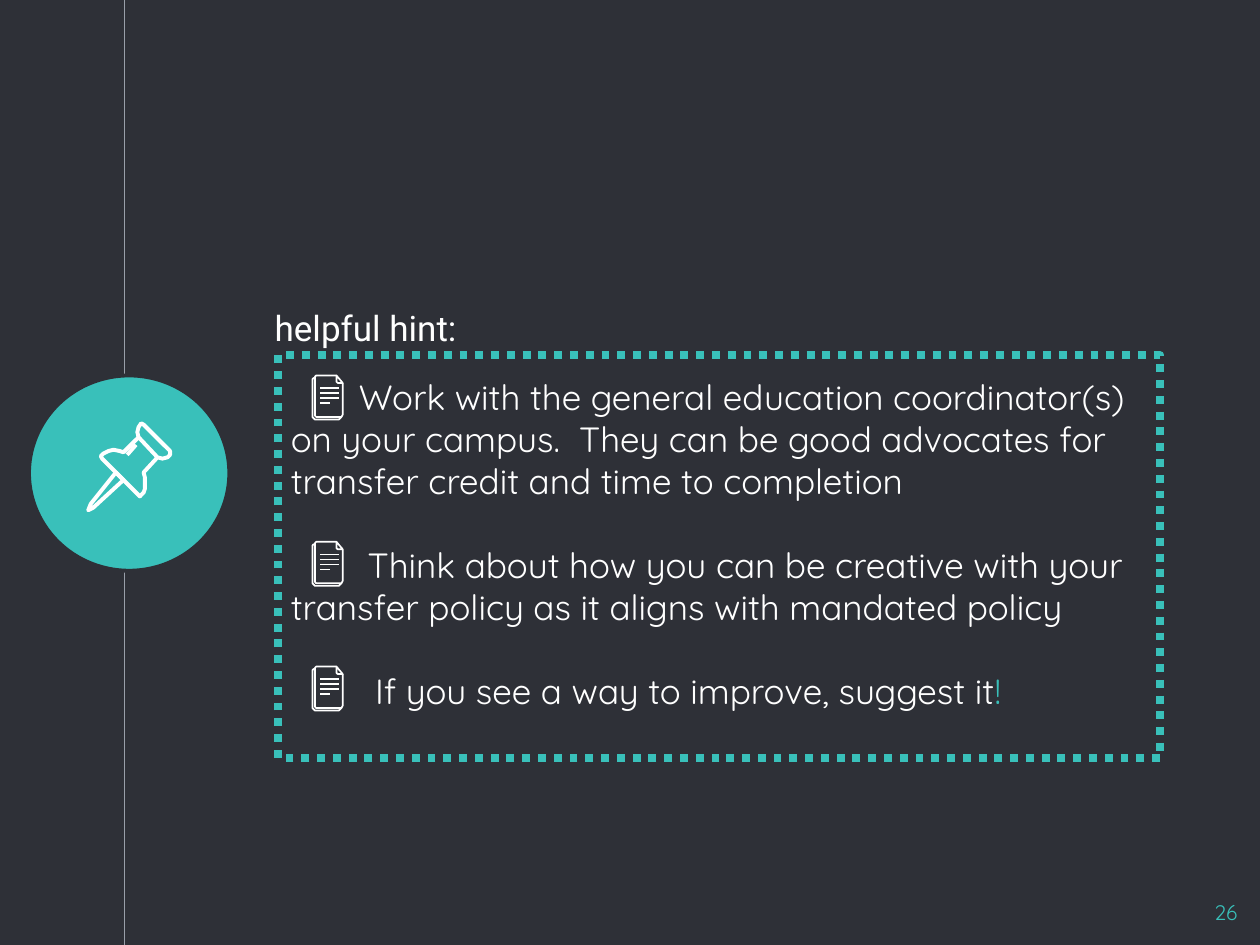
from lxml import etree
from pptx import Presentation
from pptx import util as u
from pptx.dml.color import RGBColor
from pptx.enum import dml, shapes, text
from pptx.oxml.ns import qn

THEME = {
    "bg": "2E3037", "accent": "39C0BA", "ink": "FFFFFF", "rule": "999FA9",
    "body": "Quicksand", "head": "Roboto", "size": 20, "small": 12,
    "pin_line": 2.25, "doc_line": 0.96,
}

# Content: each hint is (first-line indent, runs of text and colour)
TITLE = "helpful hint:"
NUMBER = "26"
HINTS = [
    (0.54, [("Work with the general education coordinator(s) on your campus.  "
             "They can be good advocates for transfer credit and time to completion", "ink")]),
    (0.61, [("Think about how you can be creative with your transfer policy "
             "as it aligns with mandated policy", "ink")]),
    (0.67, [("If you see a way to improve, suggest it", "ink"), ("!", "accent")]),
]

# Outlines: (points, closed); pin in slide inches, document from its own corner
PIN = [
    ([(0.92, 3.75), (0.72, 4), (0.7, 4.05), (0.74, 4.03), (0.98, 3.81)], True),
    ([(1.1, 3.47), (1.25, 3.63), (1.29, 3.64), (1.33, 3.63), (1.35, 3.61), (1.35, 3.58),
      (1.14, 3.37), (1.12, 3.36), (1.1, 3.39), (1.09, 3.43)], True),
    ([(1.1, 3.47), (0.98, 3.59), (0.95, 3.58), (0.9, 3.57), (0.86, 3.58), (0.82, 3.6),
      (0.8, 3.62), (0.81, 3.64), (1.1, 3.93), (1.11, 3.94), (1.12, 3.93), (1.14, 3.91),
      (1.15, 3.88), (1.15, 3.79), (1.14, 3.75), (1.25, 3.63)], False),
    ([(1.01, 3.61), (1.08, 3.53)], False),
]
DOCUMENT = [
    ([(0.23, 0.33), (0.22, 0.34), (0.21, 0.35), (0.02, 0.35), (0.01, 0.34), (0, 0.33),
      (0, 0.03), (0.01, 0.02), (0.02, 0.02)], False),
    ([(0.24, 0.06), (0.24, 0.31), (0.23, 0.33), (0.03, 0.33), (0.02, 0.32), (0.02, 0.01),
      (0.03, 0), (0.19, 0)], False),
    ([(0.19, 0.04), (0.19, 0), (0.24, 0.06), (0.2, 0.06), (0.19, 0.05)], True),
]
TEXT_LINES = [(0.06 + 0.04 * i, w) for i, w in enumerate([0.15, 0.15, 0.15, 0.08], 1)]
DOC_LEFT, DOC_TOPS = 2.48, [2.98, 4.3, 5.29]


def rgb(name):
    return RGBColor.from_string(THEME[name])


def style_line(sp, color, width):
    sp.line.color.rgb = rgb(color)
    sp.line.width = u.Pt(width)


def add_line(parent, x1, y1, x2, y2, color, width):
    c = parent.add_connector(shapes.MSO_CONNECTOR.STRAIGHT,
                             *map(u.Inches, (x1, y1, x2, y2)))
    style_line(c, color, width)
    etree.SubElement(c._element.spPr, qn("a:effectLst"))


def add_outlines(parent, outlines, width, dx=0, dy=0):
    for points, closed in outlines:
        pts = [(u.Inches(x + dx), u.Inches(y + dy)) for x, y in points]
        builder = parent.build_freeform(*pts[0])
        builder.add_line_segments(pts[1:], close=closed)
        sp = builder.convert_to_shape()
        sp.shadow.inherit = False
        sp.fill.background()
        style_line(sp, "ink", width)


def set_frame(sp, top=0.05):
    tf = sp.text_frame
    frame = {"word_wrap": True, "auto_size": text.MSO_AUTO_SIZE.NONE,
             "vertical_anchor": text.MSO_ANCHOR.TOP,
             "margin_left": u.Inches(0.1), "margin_right": u.Inches(0.1),
             "margin_top": u.Inches(top), "margin_bottom": u.Inches(0.05)}
    for key, value in frame.items():
        setattr(tf, key, value)
    return tf


def add_run(p, words, color="ink", font="body", size="size"):
    r = p.add_run()
    r.text = words
    for key, value in {"name": THEME[font], "size": u.Pt(THEME[size]), "bold": False}.items():
        setattr(r.font, key, value)
    r.font.color.rgb = rgb(color)


def main():
    prs = Presentation()
    prs.slide_width, prs.slide_height = u.Inches(10), u.Inches(7.5)
    s = prs.slides.add_slide(prs.slide_layouts[5])
    s.background.fill.solid()
    s.background.fill.fore_color.rgb = rgb("bg")

    # Timeline rule and pin badge
    add_line(s.shapes, 0.99, 0, 0.99, 7.5, "rule", 0.75)
    badge = s.shapes.add_shape(shapes.MSO_SHAPE.OVAL, *map(u.Inches, (0.23, 2.98, 1.59, 1.55)))
    badge.shadow.inherit = False
    badge.fill.solid()
    badge.fill.fore_color.rgb = rgb("accent")
    style_line(badge, "bg", 2.25)
    add_outlines(s.shapes.add_group_shape().shapes, PIN, THEME["pin_line"])

    # Title
    title = s.shapes.title
    title.left, title.top, title.width, title.height = map(u.Inches, (2.08, 2.38, 2.12, 0.44))
    p = set_frame(title).paragraphs[0]
    p.alignment = text.PP_ALIGN.LEFT
    add_run(p, TITLE, font="head")

    # Hint box
    box = s.shapes.add_shape(shapes.MSO_SHAPE.RECTANGLE, *map(u.Inches, (2.21, 2.82, 7, 3.2)))
    box.shadow.inherit = False
    box.fill.background()
    style_line(box, "accent", 4.5)
    box.line.dash_style = dml.MSO_LINE.ROUND_DOT
    tf = set_frame(box, top=0.16)
    for i, (indent, runs) in enumerate(HINTS):
        p = tf.add_paragraph() if i else tf.paragraphs[0]
        p.alignment = text.PP_ALIGN.LEFT
        p.space_before = u.Pt(24 if i else 0)
        p._p.get_or_add_pPr().set("indent", str(u.Inches(indent)))
        for words, color in runs:
            add_run(p, words, color)

    # Document icons, one per hint
    for top in DOC_TOPS:
        icon = s.shapes.add_group_shape().shapes
        add_outlines(icon, DOCUMENT, THEME["doc_line"], DOC_LEFT, top)
        for dy, width in TEXT_LINES:
            add_line(icon, DOC_LEFT + 0.06, top + dy, DOC_LEFT + 0.06 + width, top + dy,
                     "ink", THEME["doc_line"])

    # Slide number
    number = s.shapes.add_textbox(*map(u.Inches, (9.32, 7.04, 0.6, 0.46)))
    p = set_frame(number, top=0.1).paragraphs[0]
    p.alignment = text.PP_ALIGN.RIGHT
    add_run(p, NUMBER, "accent", size="small")

    prs.save("out.pptx")


if __name__ == "__main__":
    main()
